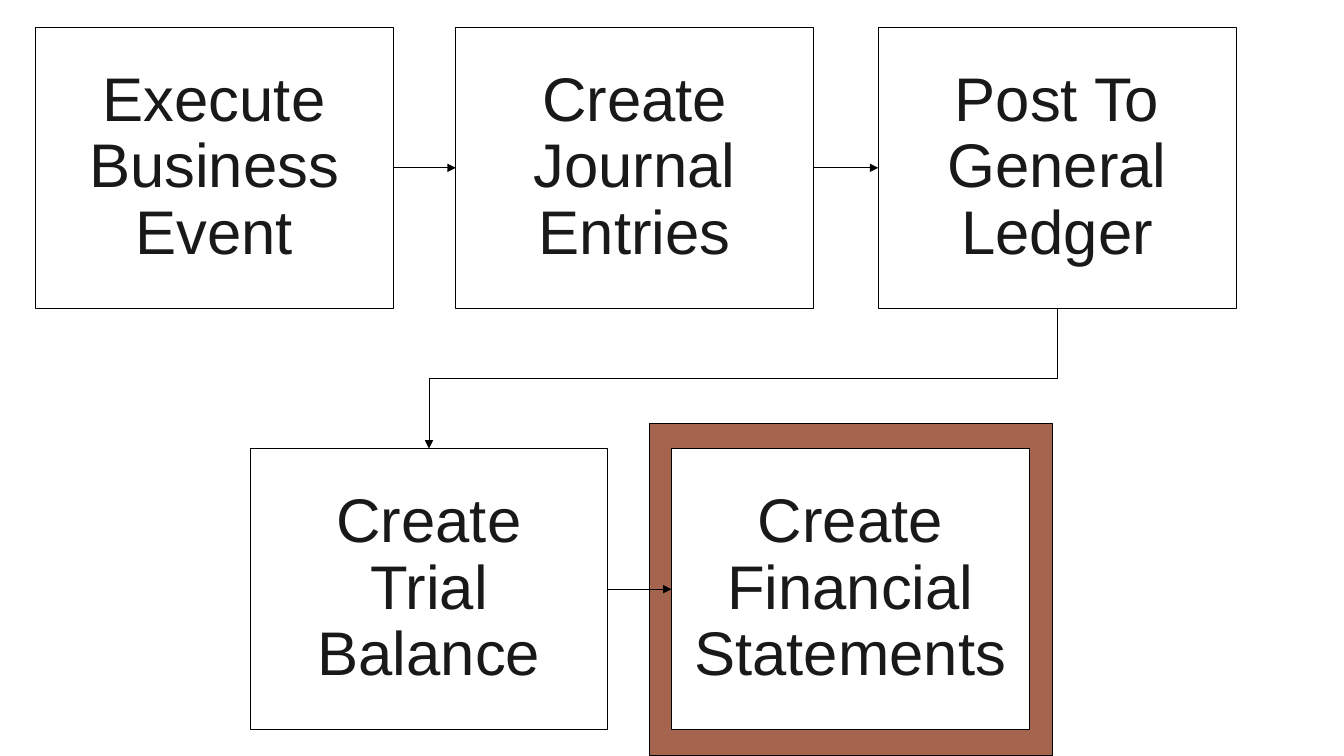
from dataclasses import dataclass

from lxml.etree import SubElement
from pptx import Presentation
from pptx.dml.color import RGBColor
from pptx.enum.shapes import MSO_CONNECTOR, MSO_SHAPE
from pptx.enum.text import MSO_ANCHOR, PP_ALIGN
from pptx.oxml.ns import qn
from pptx.shapes.autoshape import Shape
from pptx.shapes.connector import Connector
from pptx.shapes.shapetree import SlideShapes
from pptx.util import Emu, Pt

# Lengths are in px, 100 to the inch
PX = 9144
SLIDE_WIDTH, SLIDE_HEIGHT = 1333, 750
STEP_WIDTH, STEP_HEIGHT = 355, 279
TOP_ROW, BOTTOM_ROW = 27, 445

WHITE = RGBColor(0xFF, 0xFF, 0xFF)
BLACK = RGBColor(0x00, 0x00, 0x00)
INK = RGBColor(0x19, 0x19, 0x19)
RUST = RGBColor(0xA5, 0x64, 0x4E)

# Connection sites of a rectangle
TOP, LEFT, BOTTOM, RIGHT = range(4)


@dataclass(frozen=True)
class Step:
    left: int
    top: int
    words: tuple[str, ...]


STEPS = (
    Step(35, TOP_ROW, ("Execute", "Business", "Event")),
    Step(452, TOP_ROW, ("Create", "Journal", "Entries")),
    Step(871, TOP_ROW, ("Post To", "General", "Ledger")),
    Step(248, BOTTOM_ROW, ("Create", "Trial", "Balance")),
    Step(666, BOTTOM_ROW, ("Create", "Financial", "Statements")),
)


def px(length: int) -> Emu:
    return Emu(length * PX)


def add_box(shapes: SlideShapes, left: int, top: int, width: int, height: int,
            fill: RGBColor) -> Shape:
    box = shapes.add_shape(MSO_SHAPE.RECTANGLE, px(left), px(top), px(width), px(height))
    box.shadow.inherit = False
    box.fill.solid()
    box.fill.fore_color.rgb = fill
    box.line.color.rgb = BLACK
    box.line.width = Pt(0.75)
    return box


def add_step(shapes: SlideShapes, step: Step) -> Shape:
    box = add_box(shapes, step.left, step.top, STEP_WIDTH, STEP_HEIGHT, WHITE)
    frame = box.text_frame
    frame.word_wrap = False
    frame.vertical_anchor = MSO_ANCHOR.MIDDLE
    for index, word in enumerate(step.words):
        paragraph = frame.add_paragraph() if index else frame.paragraphs[0]
        paragraph.alignment = PP_ALIGN.CENTER
        paragraph.line_spacing = 0.9
        run = paragraph.add_run()
        run.text = word
        run.font.name = "Arial"
        run.font.size = Pt(44)
        run.font.color.rgb = INK
    return box


def add_arrow(shapes: SlideShapes, kind: MSO_CONNECTOR, source: Shape, source_site: int,
              target: Shape, target_site: int) -> Connector:
    arrow = shapes.add_connector(kind, 0, 0, 0, 0)
    arrow.begin_connect(source, source_site)
    arrow.end_connect(target, target_site)
    arrow.line.color.rgb = BLACK
    arrow.line.width = Pt(0.75)
    properties = arrow._element.spPr
    SubElement(properties.find(qn("a:ln")), qn("a:tailEnd"), type="triangle")
    SubElement(properties, qn("a:effectLst"))
    return arrow


def turn_downward(elbow: Connector) -> None:
    """Make the elbow leave and arrive vertically by a quarter turn about its centre."""
    across, down = elbow.width, elbow.height
    elbow.left += (across - down) // 2
    elbow.top += (down - across) // 2
    elbow.width, elbow.height = down, across
    transform = elbow._element.spPr.find(qn("a:xfrm"))
    transform.attrib.pop("flipH", None)
    transform.set("rot", "5400000")


def main() -> None:
    presentation = Presentation()
    presentation.slide_width = px(SLIDE_WIDTH)
    presentation.slide_height = px(SLIDE_HEIGHT)
    shapes = presentation.slides.add_slide(presentation.slide_layouts[6]).shapes

    # Highlight behind the current step
    add_box(shapes, 644, 420, 400, 330, RUST)

    # Steps of the accounting cycle
    event, journal, ledger, trial, statements = [add_step(shapes, step) for step in STEPS]

    # Arrows along each row
    for source, target in ((event, journal), (journal, ledger), (trial, statements)):
        add_arrow(shapes, MSO_CONNECTOR.STRAIGHT, source, RIGHT, target, LEFT)

    # Arrow from the top row to the bottom row
    turn_downward(add_arrow(shapes, MSO_CONNECTOR.ELBOW, ledger, BOTTOM, trial, TOP))

    presentation.save("out.pptx")


if __name__ == "__main__":
    main()
